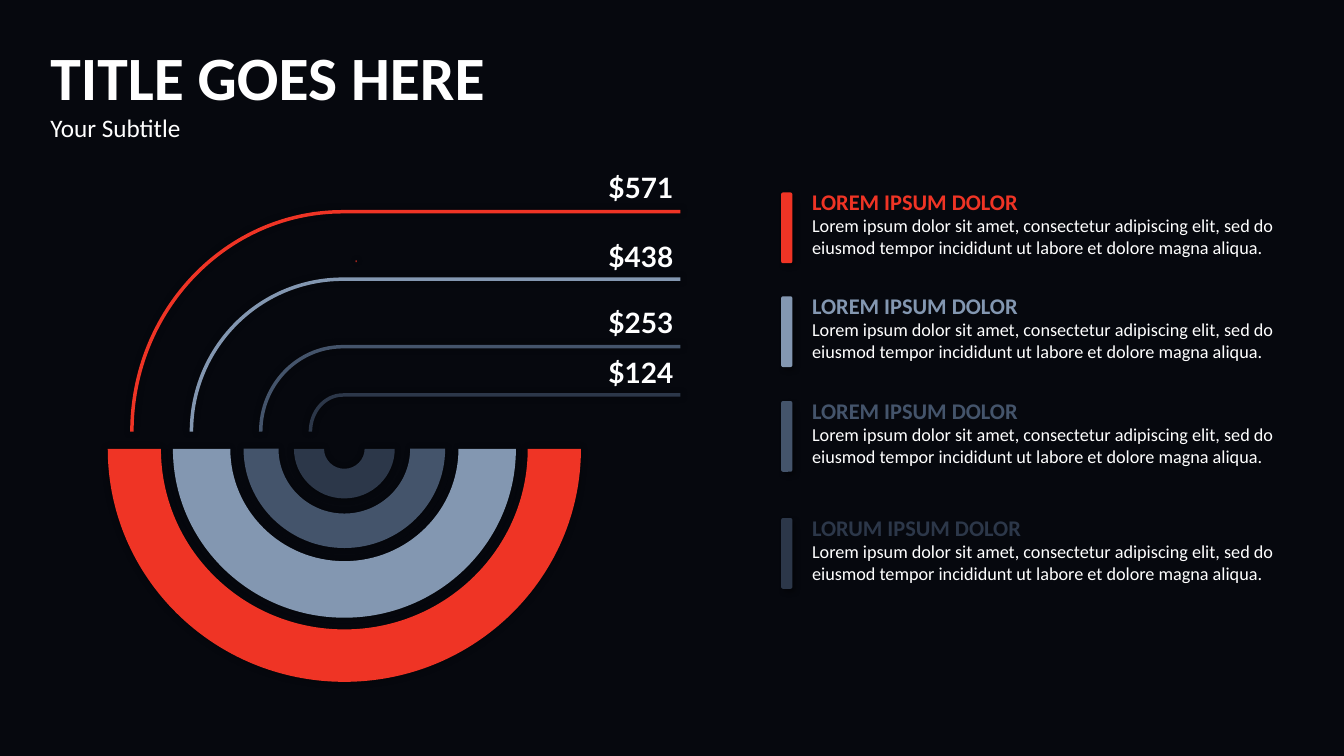
from lxml import etree
from pptx import Presentation
from pptx.dml.color import RGBColor
from pptx.enum.shapes import MSO_SHAPE as Shape
from pptx.enum.text import PP_ALIGN as Align
from pptx.oxml.ns import qn
from pptx.util import Pt

BACKGROUND, WHITE, BLACK = "222A49", "FFFFFF", "000000"
RED, BLUE, SLATE, NAVY = "EF3425", "8397B1", "44546B", "2C3749"
BODY = ("Lorem ipsum dolor sit amet, consectetur adipiscing elit, sed do "
        "eiusmod tempor incididunt ut labore et dolore magna aliqua.")
ROUNDNESS = 0.5523  # control point distance of a quarter circle
UNITS = 100  # outline units in a point
LEADER_WIDTH = 2.5

# amount, its top, colour, band outer and inner radius, leader radius across and up
RINGS = [
    ("$438", 169, BLUE, 122.5, 81.5, 109.5, 110.2),
    ("$571", 119.5, RED, 169, 131, 152, 158.4),
    ("$253", 216, SLATE, 72, 47, 60, 62),
    ("$124", 252, NAVY, 36, 14.5, 24.5, 27.5),
]
# top, colour, heading
LEGEND = [
    (131, RED, "LOREM IPSUM DOLOR"),
    (205.2, BLUE, "LOREM IPSUM DOLOR"),
    (280, SLATE, "LOREM IPSUM DOLOR"),
    (363.6, NAVY, "LORUM IPSUM DOLOR"),
]


def color(value):
    return RGBColor.from_string(value)


def fill_solid(shape, fill):
    shape.fill.solid()
    shape.fill.fore_color.rgb = color(fill)
    shape.line.fill.background()
    shape.shadow.inherit = False


def set_alpha(color_element, percent):
    etree.SubElement(color_element, qn("a:alpha"), val=str(percent * 1000))


def add_shadow(shape, blur, distance=0, direction=0):
    effects = shape._element.spPr.find(qn("a:effectLst"))
    shadow = etree.SubElement(effects, qn("a:outerShdw"), blurRad=str(Pt(blur)),
                              dist=str(Pt(distance)), dir=str(direction * 60000))
    set_alpha(etree.SubElement(shadow, qn("a:srgbClr"), val=BLACK), 40)


def add_text(slide, box, lines, font="Calibri", align=Align.LEFT, insets=(7.2, 3.6)):
    """Write one paragraph per (text, size, colour, bold) line."""
    frame = slide.shapes.add_textbox(*map(Pt, box)).text_frame
    frame.word_wrap = True
    frame.margin_left = frame.margin_right = Pt(insets[0])
    frame.margin_top = frame.margin_bottom = Pt(insets[1])
    frame.text = "\n".join(line[0] for line in lines)
    for paragraph, (_, size, fill, bold) in zip(frame.paragraphs, lines):
        paragraph.alignment = align
        run_font = paragraph.runs[0].font
        run_font.name, run_font.size, run_font.bold = font, Pt(size), bold
        run_font.color.rgb = color(fill)


def quarter(start, corner, end):
    """The two controls and the end of a quarter ellipse that bends at corner."""
    controls = [tuple(a + (c - a) * ROUNDNESS for a, c in zip(point, corner))
                for point in (start, end)]
    return [*controls, end]


def add_outline(slide, contours, fill):
    """Draw contours, each a start and steps of one point (line) or three (curve)."""
    builder = None
    for start, steps in contours:
        first = [value * UNITS for value in start]
        if builder is None:
            builder = slide.shapes.build_freeform(*first, scale=Pt(1) / UNITS)
        else:
            builder.move_to(*first)
        builder.add_line_segments([(x * UNITS, y * UNITS) for step in steps
                                   for x, y in step], close=True)
    shape = builder.convert_to_shape()
    lines = iter(list(shape._element.iter(qn("a:lnTo"))))
    for _, steps in contours:
        for step in steps:
            segment = next(lines)
            if len(step) == 3:
                curve = etree.Element(qn("a:cubicBezTo"))
                segment.addprevious(curve)
                for part in (segment, next(lines), next(lines)):
                    curve.append(part[0])
                    part.getparent().remove(part)
    fill_solid(shape, fill)
    add_shadow(shape, 5)


def add_band(slide, center_x, top, outer, inner, fill):
    def half_ring(radius, side):
        start, end = (center_x + side * radius, top), (center_x - side * radius, top)
        low = top + radius * 0.985
        bottom = (center_x, low)
        return start, [quarter(start, (start[0], low), bottom),
                       quarter(bottom, (end[0], low), end)]

    start, outer_steps = half_ring(outer, -1)
    inner_start, inner_steps = half_ring(inner, 1)
    add_outline(slide, [(start, outer_steps + [[inner_start]] + inner_steps)], fill)


def add_leader(slide, center_x, base, right, radius_x, radius_y, fill, extra):
    left, top = center_x - radius_x, base - radius_y
    inner_left, inner_top = left + LEADER_WIDTH, top + LEADER_WIDTH
    start, bend = (left, base), (center_x, inner_top)
    steps = [quarter(start, (left, top), (center_x, top)),
             [(right, top)], [(right, inner_top)], [bend],
             quarter(bend, (inner_left, inner_top), (inner_left, base))]
    add_outline(slide, [(start, steps)] + extra, fill)


def add_rings(slide, left, top, width, height):
    """Half rings at the foot, leaders and amounts above them."""
    largest = max(ring[3] for ring in RINGS)
    center_x, right = left + largest, left + width
    base, band_top = top + 158.4, top + height - largest * 0.985
    dot_x, dot_y = center_x + 8, top + 36
    dot = ((dot_x, dot_y), [[(dot_x + 0.7, dot_y)], [(dot_x + 0.7, dot_y + 1.2)],
                            [(dot_x, dot_y + 1.2)]])
    for _, _, fill, outer, inner, _, _ in RINGS:
        add_band(slide, center_x, band_top, outer, inner, fill)
    for amount, amount_top, fill, _, _, radius_x, radius_y in RINGS:
        add_leader(slide, center_x - 1, base, right, radius_x, radius_y, fill,
                   [dot] if fill == RED else [])
        add_text(slide, (right - 67.5, amount_top, 78.5, 29),
                 [(amount, 20, WHITE, True)], "Lato", Align.CENTER, (5, 2.2))


def add_legend_item(slide, left, top, fill, heading):
    add_text(slide, (left + 15, top + 18.7, 357, 55), [(BODY, 13, WHITE, False)])
    add_text(slide, (left + 15, top, 223, 26.5), [(heading, 16, fill, True)])
    bar = slide.shapes.add_shape(Shape.ROUNDED_RECTANGLE, Pt(left), Pt(top + 6.5),
                                 Pt(8), Pt(50.5))
    fill_solid(bar, fill)
    add_shadow(bar, 4, 3, 45)


def add_backdrop(slide, width, height):
    slide.background.fill.solid()
    slide.background.fill.fore_color.rgb = color(BACKGROUND)
    veil = slide.shapes.add_shape(Shape.RECTANGLE, 0, 0, width, height)
    fill_solid(veil, BLACK)
    set_alpha(veil._element.spPr.find(qn("a:solidFill"))[0], 80)


def main():
    presentation = Presentation()
    presentation.slide_width, presentation.slide_height = Pt(960), Pt(540)
    slide = presentation.slides.add_slide(presentation.slide_layouts[6])
    add_backdrop(slide, presentation.slide_width, presentation.slide_height)
    add_rings(slide, 77, 150, 409, 337)
    add_text(slide, (29, 24, 468, 82), [("TITLE GOES HERE", 44, WHITE, True),
                                        ("Your Subtitle", 18, WHITE, False)])
    for top, fill, heading in LEGEND:
        add_legend_item(slide, 558, top, fill, heading)
    presentation.save("out.pptx")


if __name__ == "__main__":
    main()
